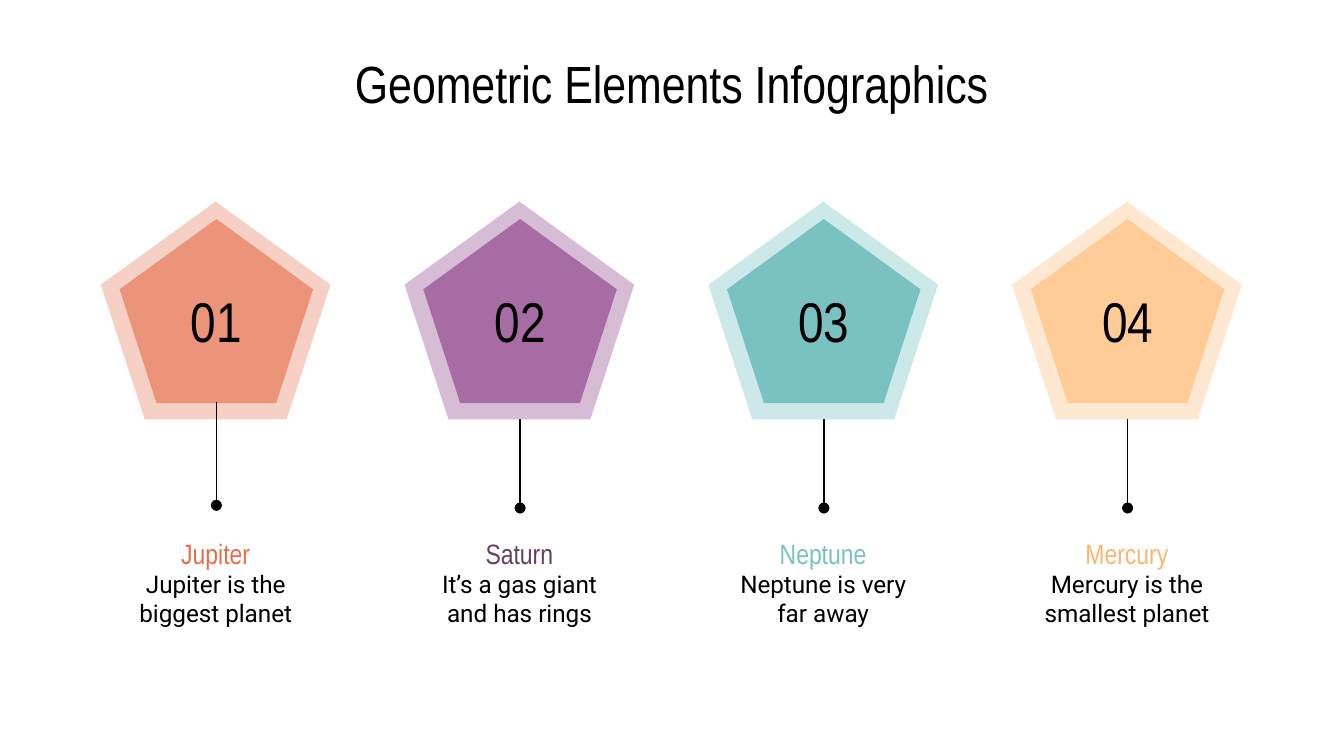
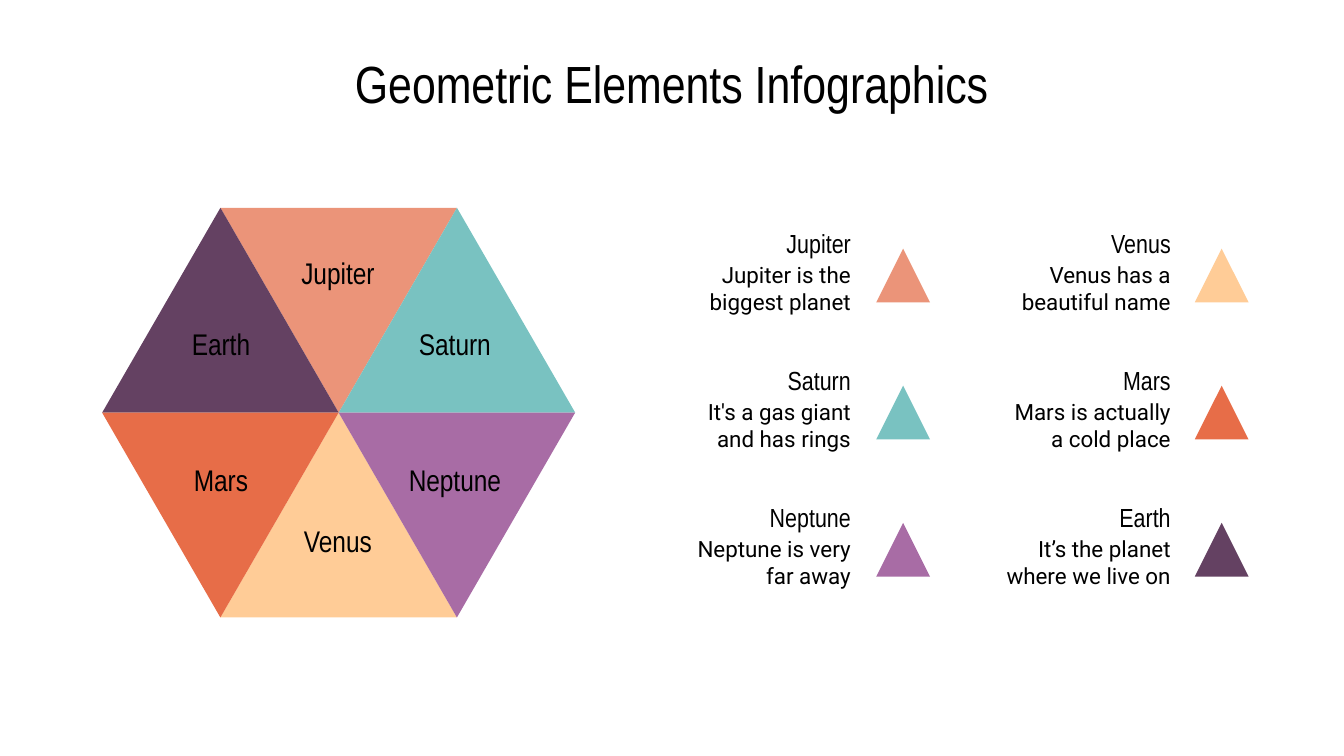
import math
from dataclasses import dataclass
from typing import NamedTuple

from pptx import Presentation
from pptx.dml.color import RGBColor
from pptx.enum.shapes import MSO_CONNECTOR, MSO_SHAPE
from pptx.enum.text import MSO_ANCHOR, MSO_AUTO_SIZE, PP_ALIGN
from pptx.oxml.ns import qn
from pptx.oxml.xmlchemy import OxmlElement
from pptx.shapes.autoshape import Shape
from pptx.slide import Slide
from pptx.util import Inches, Pt

PENTAGON = MSO_SHAPE.REGULAR_PENTAGON
TRIANGLE = MSO_SHAPE.ISOSCELES_TRIANGLE
STRAIGHT = MSO_CONNECTOR.STRAIGHT
CENTER, RIGHT = PP_ALIGN.CENTER, PP_ALIGN.RIGHT
TOP, MIDDLE = MSO_ANCHOR.TOP, MSO_ANCHOR.MIDDLE
NO_AUTOFIT = MSO_AUTO_SIZE.NONE
TITLE_ONLY = 5


# Shared look
@dataclass(frozen=True)
class Theme:
    black: str = "000000"
    white: str = "FFFFFF"
    salmon: str = "EB9479"
    orange: str = "E76D48"
    mauve: str = "A86CA5"
    plum: str = "644162"
    teal: str = "79C2C1"
    peach: str = "FFCC97"
    amber: str = "F9B671"
    heading_font: str = "Arial Narrow"
    body_font: str = "Roboto"
    title_size: int = 28
    number_size: int = 30
    wedge_size: int = 16
    planet_size: int = 15
    planet_body_size: int = 13
    legend_size: int = 14
    legend_body_size: int = 12
    line_width: float = 0.75


THEME = Theme()
TITLE = "Geometric Elements Infographics"


class Box(NamedTuple):
    """Left, top, width and height in inches."""
    left: float
    top: float
    width: float
    height: float

    def lengths(self) -> tuple:
        return tuple(Inches(value) for value in self)


class TextStyle(NamedTuple):
    font: str
    size: int
    color: str = THEME.black
    align: PP_ALIGN = CENTER


class Planet(NamedTuple):
    name: str
    text: str
    fill: str
    name_color: str
    halo_opacity: int
    line_top: float = 3.12
    line_bottom: float = 3.78


class Wedge(NamedTuple):
    name: str
    fill: str
    rotation: int
    shift: int          # whole triangle sides to the right
    label_column: int
    label_top: float


class LegendEntry(NamedTuple):
    name: str
    text: str
    fill: str


# Slide 1 content
PLANETS = [
    Planet("Jupiter", "Jupiter is the biggest planet", THEME.salmon, THEME.orange, 43, 2.99, 3.76),
    Planet("Saturn", "It’s a gas giant and has rings", THEME.mauve, THEME.plum, 45),
    Planet("Neptune", "Neptune is very far away", THEME.teal, THEME.teal, 37),
    Planet("Mercury", "Mercury is the smallest planet", THEME.peach, THEME.amber, 44),
]
PLANET_PITCH = 2.26

# Slide 2 content
WEDGES = [
    Wedge("Venus", THEME.peach, 0, 0, 1, 3.89),
    Wedge("Jupiter", THEME.salmon, 180, 0, 1, 1.89),
    Wedge("Saturn", THEME.teal, 240, 0, 2, 2.42),
    Wedge("Earth", THEME.plum, 240, -1, 0, 2.42),
    Wedge("Mars", THEME.orange, 300, -1, 0, 3.43),
    Wedge("Neptune", THEME.mauve, 300, 0, 2, 3.43),
]
HEXAGON_X, HEXAGON_Y = 2.52, 3.07
SIDE = 1.76
WEDGE_HEIGHT = SIDE * math.sqrt(3) / 2
LABEL_PITCH = 0.87

LEGEND_COLUMNS = [
    [
        LegendEntry("Jupiter", "Jupiter is the biggest planet", THEME.salmon),
        LegendEntry("Saturn", "It's a gas giant and has rings", THEME.teal),
        LegendEntry("Neptune", "Neptune is very far away", THEME.mauve),
    ],
    [
        LegendEntry("Venus", "Venus has a beautiful name", THEME.peach),
        LegendEntry("Mars", "Mars is actually a cold place", THEME.orange),
        LegendEntry("Earth", "It’s the planet where we live on", THEME.plum),
    ],
]
LEGEND_TEXT_PITCH = 2.38
LEGEND_MARK_PITCH = 2.37
LEGEND_ROW_PITCH = 1.02


# Drawing helpers
def write_text(shape: Shape, text: str, style: TextStyle, anchor: MSO_ANCHOR) -> None:
    frame = shape.text_frame
    frame.text = text
    frame.word_wrap = True
    frame.auto_size = NO_AUTOFIT
    frame.vertical_anchor = anchor
    frame.margin_left = frame.margin_right = Inches(0.1)
    frame.margin_top = frame.margin_bottom = Inches(0.1)
    paragraph = frame.paragraphs[0]
    paragraph.alignment = style.align
    font = paragraph.runs[0].font
    font.name = style.font
    font.size = Pt(style.size)
    font.color.rgb = RGBColor.from_string(style.color)


def add_text(slide: Slide, box: Box, text: str, style: TextStyle) -> None:
    write_text(slide.shapes.add_textbox(*box.lengths()), text, style, MIDDLE)


def add_caption(slide: Slide, left: float, top: float, width: float,
                name: str, name_style: TextStyle, text: str, text_style: TextStyle) -> None:
    add_text(slide, Box(left, top + 0.23, width, 0.48), text, text_style)
    add_text(slide, Box(left, top, width, 0.27), name, name_style)


def add_filled_shape(slide: Slide, kind: MSO_SHAPE, box: Box, color: str,
                     opacity: int = 100, rotation: int = 0) -> None:
    shape = slide.shapes.add_shape(kind, *box.lengths())
    shape.shadow.inherit = False
    shape.fill.solid()
    shape.fill.fore_color.rgb = RGBColor.from_string(color)
    shape.line.fill.background()
    shape.rotation = rotation
    if opacity < 100:
        alpha = OxmlElement("a:alpha")
        alpha.set("val", str(opacity * 1000))
        shape.element.spPr.find(qn("a:solidFill"))[0].append(alpha)


def add_dotted_stem(slide: Slide, x: float, top: float, bottom: float) -> None:
    connector = slide.shapes.add_connector(
        STRAIGHT, Inches(x), Inches(top), Inches(x), Inches(bottom))
    connector.line.color.rgb = RGBColor.from_string(THEME.black)
    connector.line.width = Pt(THEME.line_width)
    properties = connector.element.spPr
    dot = OxmlElement("a:tailEnd")
    dot.set("type", "oval")
    properties.find(qn("a:ln")).append(dot)
    properties.append(OxmlElement("a:effectLst"))


def add_titled_slide(presentation: Presentation) -> Slide:
    slide = presentation.slides.add_slide(presentation.slide_layouts[TITLE_ONLY])
    slide.background.fill.solid()
    slide.background.fill.fore_color.rgb = RGBColor.from_string(THEME.white)
    title = slide.shapes.title
    title.left, title.top, title.width, title.height = Box(0.39, 0.28, 9.21, 0.63).lengths()
    write_text(title, TITLE, TextStyle(THEME.heading_font, THEME.title_size), TOP)
    return slide


# Slide 1: four numbered pentagons
def build_pentagon_slide(presentation: Presentation) -> None:
    slide = add_titled_slide(presentation)
    number_style = TextStyle(THEME.heading_font, THEME.number_size)
    body_style = TextStyle(THEME.body_font, THEME.planet_body_size)
    for index, planet in enumerate(PLANETS):
        offset = index * PLANET_PITCH
        add_filled_shape(slide, PENTAGON, Box(0.75 + offset, 1.5, 1.71, 1.62),
                         planet.fill, planet.halo_opacity)
        add_filled_shape(slide, PENTAGON, Box(0.89 + offset, 1.63, 1.44, 1.37), planet.fill)
        add_dotted_stem(slide, 1.61 + offset, planet.line_top, planet.line_bottom)
        name_style = TextStyle(THEME.heading_font, THEME.planet_size, planet.name_color)
        add_caption(slide, 0.84 + offset, 3.98, 1.53,
                    planet.name, name_style, planet.text, body_style)
        add_text(slide, Box(1.19 + offset, 2.09, 0.84, 0.58), f"{index + 1:02d}", number_style)


# Slide 2: hexagon of triangles with a legend
def add_wedge(slide: Slide, wedge: Wedge) -> None:
    angle = math.radians(wedge.rotation)
    reach = WEDGE_HEIGHT / 2
    left = HEXAGON_X - reach * math.sin(angle) + (wedge.shift - 0.5) * SIDE
    top = HEXAGON_Y + reach * math.cos(angle) - reach
    add_filled_shape(slide, TRIANGLE, Box(left, top, SIDE, WEDGE_HEIGHT),
                     wedge.fill, rotation=wedge.rotation)


def build_hexagon_slide(presentation: Presentation) -> None:
    slide = add_titled_slide(presentation)
    for wedge in WEDGES:
        add_wedge(slide, wedge)

    name_style = TextStyle(THEME.heading_font, THEME.legend_size, align=RIGHT)
    body_style = TextStyle(THEME.body_font, THEME.legend_body_size, align=RIGHT)
    for column, entries in enumerate(LEGEND_COLUMNS):
        mark_left = 6.52 + column * LEGEND_MARK_PITCH
        text_left = 4.98 + column * LEGEND_TEXT_PITCH
        for row, entry in enumerate(entries):
            y = row * LEGEND_ROW_PITCH
            add_filled_shape(slide, TRIANGLE, Box(mark_left, 1.85 + y, 0.4, 0.4), entry.fill)
            add_caption(slide, text_left, 1.67 + y, 1.45,
                        entry.name, name_style, entry.text, body_style)

    label_style = TextStyle(THEME.heading_font, THEME.wedge_size)
    for wedge in WEDGES:
        left = 0.98 + wedge.label_column * LABEL_PITCH
        add_text(slide, Box(left, wedge.label_top, 1.33, 0.27), wedge.name, label_style)


def main() -> None:
    presentation = Presentation()
    presentation.slide_width = Inches(10)
    presentation.slide_height = Inches(10) * 9 // 16
    build_pentagon_slide(presentation)
    build_hexagon_slide(presentation)
    presentation.save("out.pptx")


if __name__ == "__main__":
    main()
